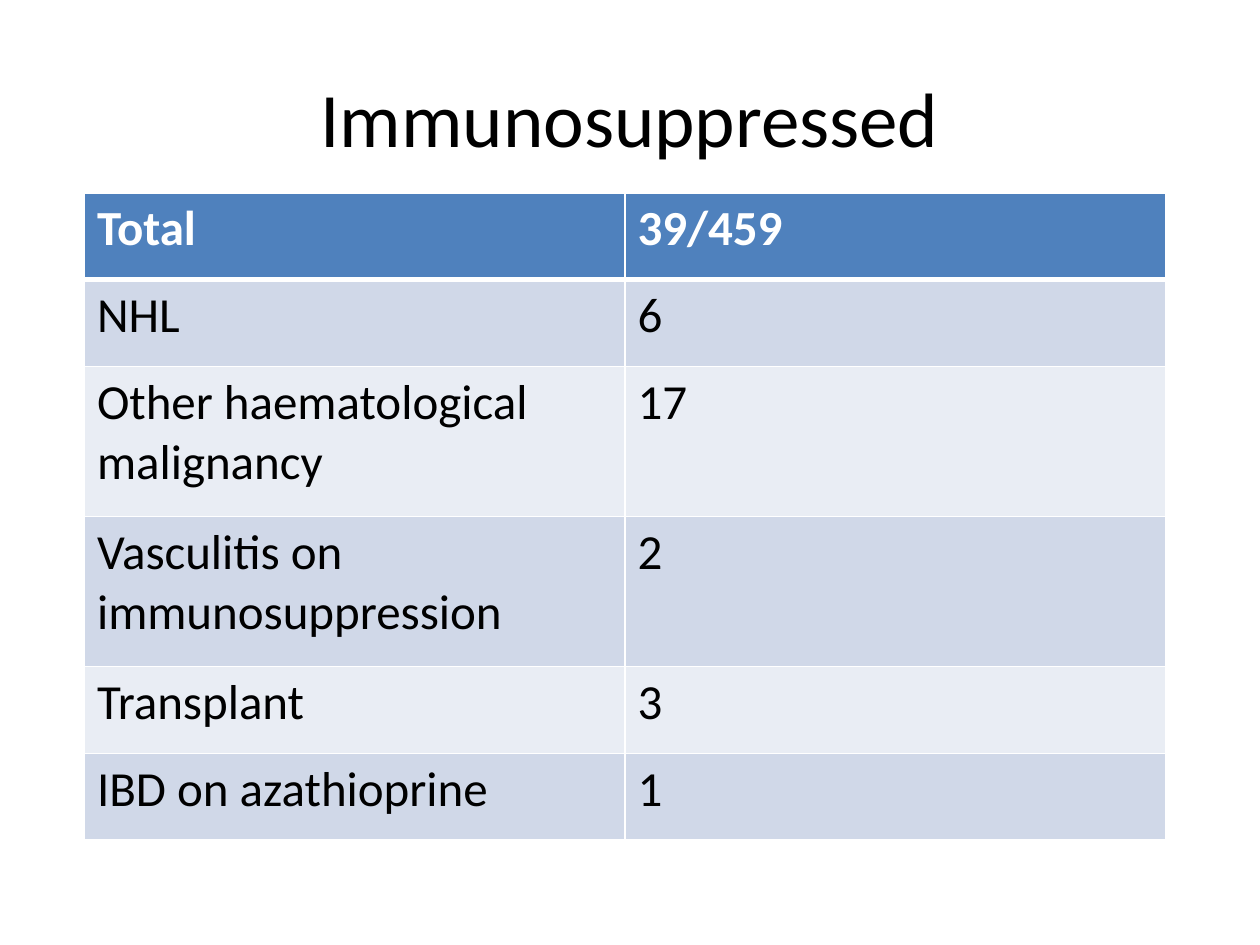
from typing import NamedTuple

from lxml import etree
from pptx import Presentation
from pptx import util as u
from pptx.dml import color
from pptx.enum import text
from pptx.oxml import ns

FONT = "Calibri"
WHITE, BLACK, BLUE = "FFFFFF", "000000", "4F81BD"
BANDS = ("D0D8E8", "E9EDF4")


class Row(NamedTuple):
    label: str
    count: str
    high: float = 0.69


ROWS = [
    Row("Total", "39/459"),
    Row("NHL", "6"),
    Row("Other haematological malignancy", "17", 1.19),
    Row("Vasculitis on immunosuppression", "2", 1.19),
    Row("Transplant", "3"),
    Row("IBD on azathioprine", "1"),
]


def rgb(code: str) -> color.RGBColor:
    return color.RGBColor.from_string(code)


def style(para, size: float, code: str, bold: bool = False) -> None:
    font = para.font
    font.name, font.size, font.bold = FONT, u.Pt(size), bold
    font.color.rgb = rgb(code)


def edge(cell, side: str, width: float) -> None:
    """Add one white border; call in the order L, R, T, B."""
    props = cell._tc.get_or_add_tcPr()
    line = etree.SubElement(props, ns.qn(f"a:ln{side}"), w=str(u.Pt(width)))
    fill = etree.SubElement(line, ns.qn("a:solidFill"))
    etree.SubElement(fill, ns.qn("a:srgbClr"), val=WHITE)


def draw_cell(cell, words: str, num: int) -> None:
    head = num == 0
    widths = {"L": 1, "R": 1, "T": 3 if num == 1 else 1, "B": 3 if head else 1}
    for side, width in widths.items():
        edge(cell, side, width)
    cell.fill.solid()
    cell.fill.fore_color.rgb = rgb(BLUE if head else BANDS[(num - 1) % 2])
    cell.text = words
    style(cell.text_frame.paragraphs[0], 28, WHITE if head else BLACK, head)


def draw_table(slide, rows: list[Row]) -> None:
    high = sum(row.high for row in rows)
    frame = slide.shapes.add_table(
        len(rows), 2, u.Inches(0.67), u.Inches(1.53),
        u.Inches(8.58), u.Inches(high))
    table = frame.table
    for num, row in enumerate(rows):
        table.rows[num].height = u.Inches(row.high)
        for col, words in enumerate((row.label, row.count)):
            draw_cell(table.cell(num, col), words, num)


def main() -> None:
    deck = Presentation()
    deck.slide_width, deck.slide_height = u.Inches(10), u.Inches(7.5)
    slide = deck.slides.add_slide(deck.slide_layouts[5])

    # Title
    title = slide.shapes.title
    title.left, title.top = u.Inches(0.5), u.Inches(0.3)
    title.width, title.height = u.Inches(9), u.Inches(1.25)
    title.text_frame.text = "Immunosuppressed"
    title.text_frame.vertical_anchor = text.MSO_ANCHOR.MIDDLE
    para = title.text_frame.paragraphs[0]
    para.alignment = text.PP_ALIGN.CENTER
    style(para, 44, BLACK)

    # Patient counts
    draw_table(slide, ROWS)
    deck.save("out.pptx")


if __name__ == "__main__":
    main()
